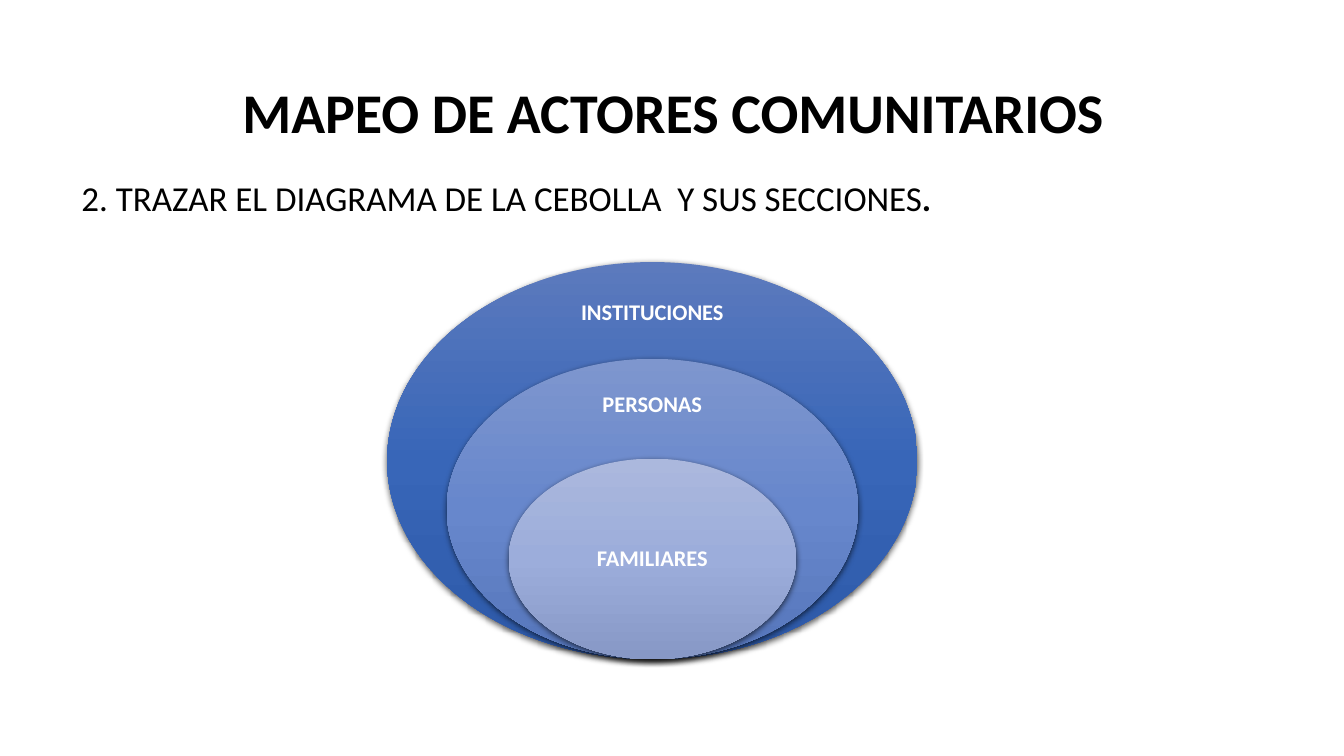
import copy

import pptx
import pptx.dml.color
import pptx.enum.shapes
import pptx.enum.text
import pptx.oxml
import pptx.oxml.ns
import pptx.util

Inches = pptx.util.Inches
Align = pptx.enum.text.PP_ALIGN
Anchor = pptx.enum.text.MSO_ANCHOR

FONT = "Calibri"
COLORS = {"text": "000000", "label": "FFFFFF", "shadow": "000000"}
TITLE = [(" ", 44, False), ("MAPEO DE ACTORES COMUNITARIOS ", 40, True)]
STEP = [
    ("2. TRAZAR EL DIAGRAMA DE LA CEBOLLA  Y SUS SECCIONES", 25, False),
    (".", 25, True),
]
LAYERS = [
    {"name": "INSTITUCIONES", "size": (5.26, 3.94), "label": (2.81, 1.84, 0.59),
     "stops": ("5C7ABD", "3866B8", "2D59A8")},
    {"name": "PERSONAS", "size": (4.08, 2.98), "label": (3.74, 1.9, 0.56),
     "stops": ("7E96CE", "6787CC", "5676BB")},
    {"name": "FAMILIARES", "size": (2.85, 1.99), "label": (5.05, 2.02, 0.99),
     "stops": ("ABB8DD", "9CADDB", "8798C6")},
]
ONION_CENTER, ONION_BOTTOM = 6.47, 6.54


def rgb(value):
    """Turn a hex string into a colour."""
    return pptx.dml.color.RGBColor.from_string(value)


def add_text(shapes, box, runs, color, align, anchor, inset=None):
    """Add a one-paragraph text box made of (text, size, bold) runs."""
    frame = shapes.add_textbox(*map(Inches, box)).text_frame
    frame.word_wrap = True
    frame.vertical_anchor = anchor
    if inset is not None:
        frame.margin_left = frame.margin_right = Inches(inset)
        frame.margin_top = frame.margin_bottom = Inches(inset)
    paragraph = frame.paragraphs[0]
    paragraph.alignment = align
    paragraph.line_spacing = 0.9
    for text, size, bold in runs:
        run = paragraph.add_run()
        run.text = text
        run.font.name = FONT
        run.font.size = pptx.util.Pt(size)
        run.font.bold = bold
        run.font.color.rgb = rgb(color)


def add_ellipse(shapes, width, height, stops):
    """Add one onion layer resting on the common bottom point."""
    box = (ONION_CENTER - width / 2, ONION_BOTTOM - height, width, height)
    ellipse = shapes.add_shape(
        pptx.enum.shapes.MSO_SHAPE.OVAL, *map(Inches, box))
    ellipse.line.fill.background()
    ellipse.fill.gradient()
    ellipse.fill.gradient_angle = 270
    properties = ellipse._element.spPr
    stop_list = properties.find(".//" + pptx.oxml.ns.qn("a:gsLst"))
    stop_list.append(copy.deepcopy(stop_list[0]))
    for index, (stop, color) in enumerate(zip(ellipse.fill.gradient_stops, stops)):
        stop.position = index / 2
        stop.color.rgb = rgb(color)
    ellipse.shadow.inherit = False
    properties.find(pptx.oxml.ns.qn("a:effectLst")).append(pptx.oxml.parse_xml(
        f'<a:outerShdw {pptx.oxml.ns.nsdecls("a")} blurRad="57150" dist="19050" '
        f'dir="5400000" algn="ctr" rotWithShape="0">'
        f'<a:srgbClr val="{COLORS["shadow"]}"><a:alpha val="63000"/></a:srgbClr>'
        f'</a:outerShdw>'))


def main():
    """Build the slide and save it."""
    presentation = pptx.Presentation()
    presentation.slide_width = Inches(13.33)
    presentation.slide_height = Inches(7.5)
    slide = presentation.slides.add_slide(presentation.slide_layouts[6])
    add_text(slide.shapes, (0.92, 0.4, 11.5, 1.45), TITLE,
             COLORS["text"], Align.CENTER, Anchor.MIDDLE)
    add_text(slide.shapes, (0.71, 1.75, 11.5, 4.96), STEP,
             COLORS["text"], Align.JUSTIFY, Anchor.TOP)
    onion = slide.shapes.add_group_shape().shapes
    for layer in LAYERS:
        add_ellipse(onion, *layer["size"], layer["stops"])
        top, width, height = layer["label"]
        add_text(onion, (ONION_CENTER - width / 2, top, width, height),
                 [(layer["name"], 16, True)], COLORS["label"],
                 Align.CENTER, Anchor.MIDDLE, 0.12)
    presentation.save("out.pptx")


if __name__ == "__main__":
    main()
